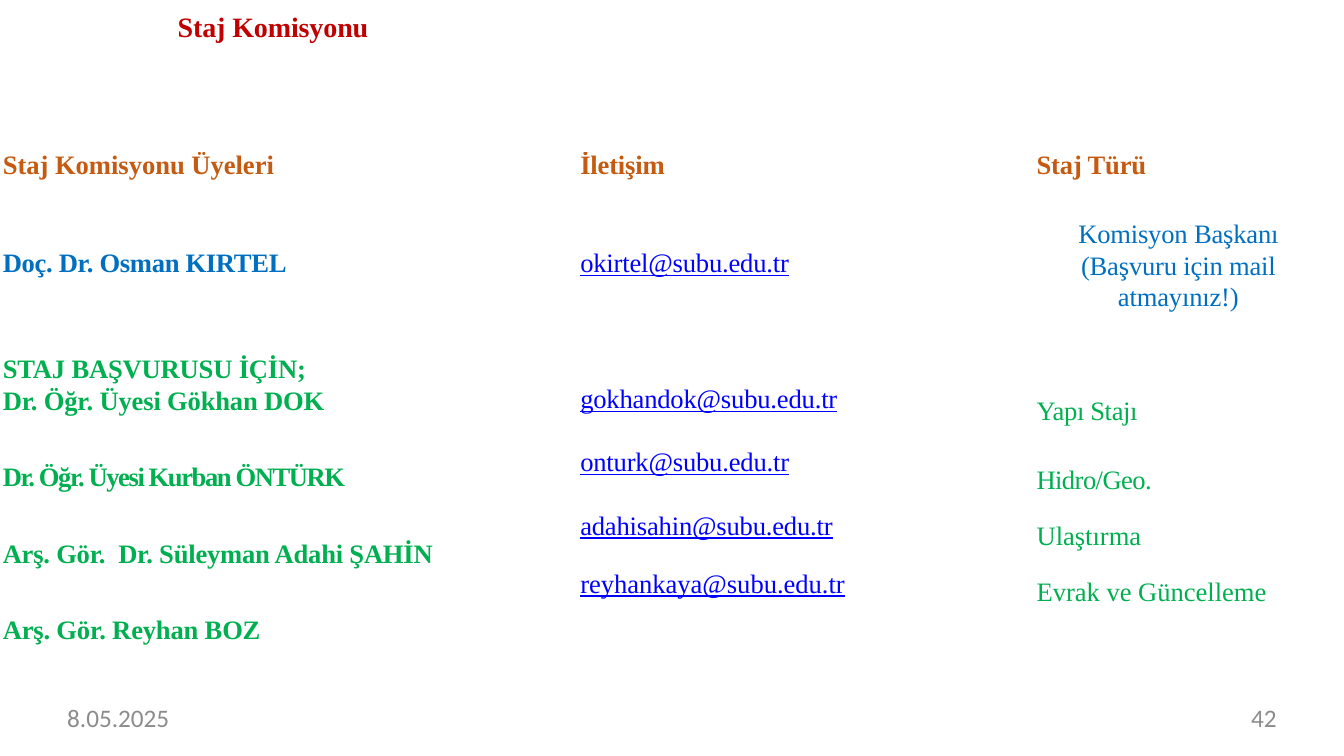
"""Build the internship commission slide with its members table and footer."""
import dataclasses
import typing

import pptx
import pptx.dml.color
import pptx.enum.text
import pptx.oxml.ns
import pptx.slide
import pptx.text.text
import pptx.util

Pt = pptx.util.Pt
RGBColor = pptx.dml.color.RGBColor
Align = pptx.enum.text.PP_ALIGN

RED = RGBColor(0xC0, 0x00, 0x00)
ORANGE = RGBColor(0xC5, 0x5A, 0x11)
BLUE = RGBColor(0x00, 0x6F, 0xC0)
LINK_BLUE = RGBColor(0x00, 0x00, 0xFF)
GREEN = RGBColor(0x00, 0xAF, 0x50)
GRAY = RGBColor(0x8C, 0x8C, 0x8C)

SERIF = {"name": "Times New Roman", "size": Pt(19)}
BOLD = {**SERIF, "bold": True}
MAIL = {**SERIF, "underline": True}
TITLE = {**BOLD, "size": Pt(20)}
FOOTER = {"name": "Calibri", "size": Pt(18)}

HEADER_LINE = {"line_spacing": Pt(20.7)}
MEMBER_LINE = {"line_spacing": Pt(48.8), "space_before": Pt(5.9)}
TYPE_LINE = {"line_spacing": Pt(48.7)}
TYPE_GAP = {"line_spacing": 1.07, "space_before": Pt(17.9)}
CENTERED = {"line_spacing": 1.07, "alignment": Align.CENTER}

COLUMN_WIDTHS = (380, 335.5, 220.5)
ROW_HEIGHTS = (46.8, 97.2, 204.5)
TABLE_TOP = 108


@dataclasses.dataclass(frozen=True)
class Line:
    """One paragraph with its layout and character spacing in points."""

    text: str
    layout: dict[str, typing.Any] = dataclasses.field(default_factory=dict)
    spacing: float = 0


@dataclasses.dataclass(frozen=True)
class Block:
    """Paragraphs that share a font, a colour and margins in points."""

    lines: tuple[Line, ...]
    font: dict[str, typing.Any]
    color: RGBColor
    left: float = 0
    top: float = 0
    right: float = 0


@dataclasses.dataclass(frozen=True)
class Box:
    """A text box placed in points."""

    left: float
    top: float
    width: float
    height: float
    block: Block


CELLS = (
    (
        Block((Line("Staj Komisyonu Üyeleri", HEADER_LINE),), BOLD, ORANGE, 2),
        Block((Line("İletişim", HEADER_LINE, -0.1),), BOLD, ORANGE, 34.5),
        Block((Line("Staj Türü", HEADER_LINE, -0.1),), BOLD, ORANGE, 25),
    ),
    (
        Block((Line("Doç. Dr. Osman KIRTEL", spacing=-0.2),), BOLD, BLUE, 2, 23),
        Block((Line("okirtel@subu.edu.tr", spacing=-0.1),), MAIL, LINK_BLUE, 34.5, 23),
        Block((Line("Komisyon Başkanı (Başvuru için mail atmayınız!)", CENTERED, -0.1),),
              SERIF, BLUE, 35, 1, 3),
    ),
    (
        Block((
            Line("STAJ BAŞVURUSU İÇİN;", {"line_spacing": Pt(22.4)}, -0.1),
            Line("Dr. Öğr. Üyesi Gökhan DOK", {"space_before": Pt(1.6)}, -0.1),
            Line("Dr. Öğr. Üyesi Kurban ÖNTÜRK", MEMBER_LINE, -1),
            Line("Arş. Gör.  Dr. Süleyman Adahi ŞAHİN", MEMBER_LINE, -0.15),
            Line("Arş. Gör. Reyhan BOZ", MEMBER_LINE, -0.1),
        ), BOLD, GREEN, 2),
        Block((
            Line("gokhandok@subu.edu.tr", spacing=-0.1),
            Line("onturk@subu.edu.tr", {"space_before": Pt(24)}, -0.1),
            Line("adahisahin@subu.edu.tr", {"space_before": Pt(24.3)}, -0.1),
            Line("reyhankaya@subu.edu.tr", {"space_before": Pt(20.4)}),
        ), MAIL, LINK_BLUE, 34.5, 23),
        Block((
            Line("Yapı Stajı", TYPE_LINE, -0.25),
            Line("Hidro/Geo.", TYPE_LINE, -0.4),
            Line("Ulaştırma", TYPE_GAP),
            Line("Evrak ve Güncelleme", TYPE_GAP),
        ), SERIF, GREEN, 25, 4),
    ),
)

BOXES = (
    Box(126, 5, 484, 26, Block((Line("Staj Komisyonu", spacing=-0.1),), TITLE, RED, 1, 2)),
    Box(48, 502, 221, 27, Block((Line("8.05.2025"),), FOOTER, GRAY)),
    Box(691, 502, 221, 27,
        Block((Line("42", {"alignment": Align.RIGHT}),), FOOTER, GRAY)),
)


def set_attributes(target: typing.Any, values: dict[str, typing.Any]) -> None:
    """Set every named value on the target."""
    for name, value in values.items():
        setattr(target, name, value)


def write_block(container: typing.Any, frame: pptx.text.text.TextFrame, block: Block) -> None:
    """Write a block into the frame of a cell or a text box."""
    set_attributes(container, {
        "margin_left": Pt(block.left),
        "margin_top": Pt(block.top),
        "margin_right": Pt(block.right),
        "margin_bottom": Pt(0),
    })
    frame.word_wrap = True
    for index, line in enumerate(block.lines):
        paragraph = frame.add_paragraph() if index else frame.paragraphs[0]
        set_attributes(paragraph, line.layout)
        run = paragraph.add_run()
        run.text = line.text
        set_attributes(run.font, block.font)
        run.font.color.rgb = block.color
        if line.spacing:
            run._r.get_or_add_rPr().set("spc", str(round(line.spacing * 100)))


def add_members_table(slide: pptx.slide.Slide) -> None:
    """Add the table of members, addresses and internship types."""
    shape = slide.shapes.add_table(
        len(ROW_HEIGHTS), len(COLUMN_WIDTHS), Pt(0), Pt(TABLE_TOP),
        Pt(sum(COLUMN_WIDTHS)), Pt(sum(ROW_HEIGHTS)))
    table = shape.table
    set_attributes(table, {"first_row": False, "horz_banding": False})
    for column, width in zip(table.columns, COLUMN_WIDTHS):
        column.width = Pt(width)
    for row, height, blocks in zip(table.rows, ROW_HEIGHTS, CELLS):
        row.height = Pt(height)
        for cell, block in zip(row.cells, blocks):
            cell.fill.background()
            write_block(cell, cell.text_frame, block)


def add_box(slide: pptx.slide.Slide, box: Box) -> None:
    """Add one text box."""
    shape = slide.shapes.add_textbox(Pt(box.left), Pt(box.top), Pt(box.width), Pt(box.height))
    write_block(shape.text_frame, shape.text_frame, box.block)


def main() -> None:
    """Create and save the presentation."""
    presentation = pptx.Presentation()
    set_attributes(presentation, {"slide_width": Pt(960), "slide_height": Pt(540)})
    slide = presentation.slides.add_slide(presentation.slide_layouts[6])
    add_members_table(slide)
    for box in BOXES:
        add_box(slide, box)
    presentation.save("out.pptx")


if __name__ == "__main__":
    main()
